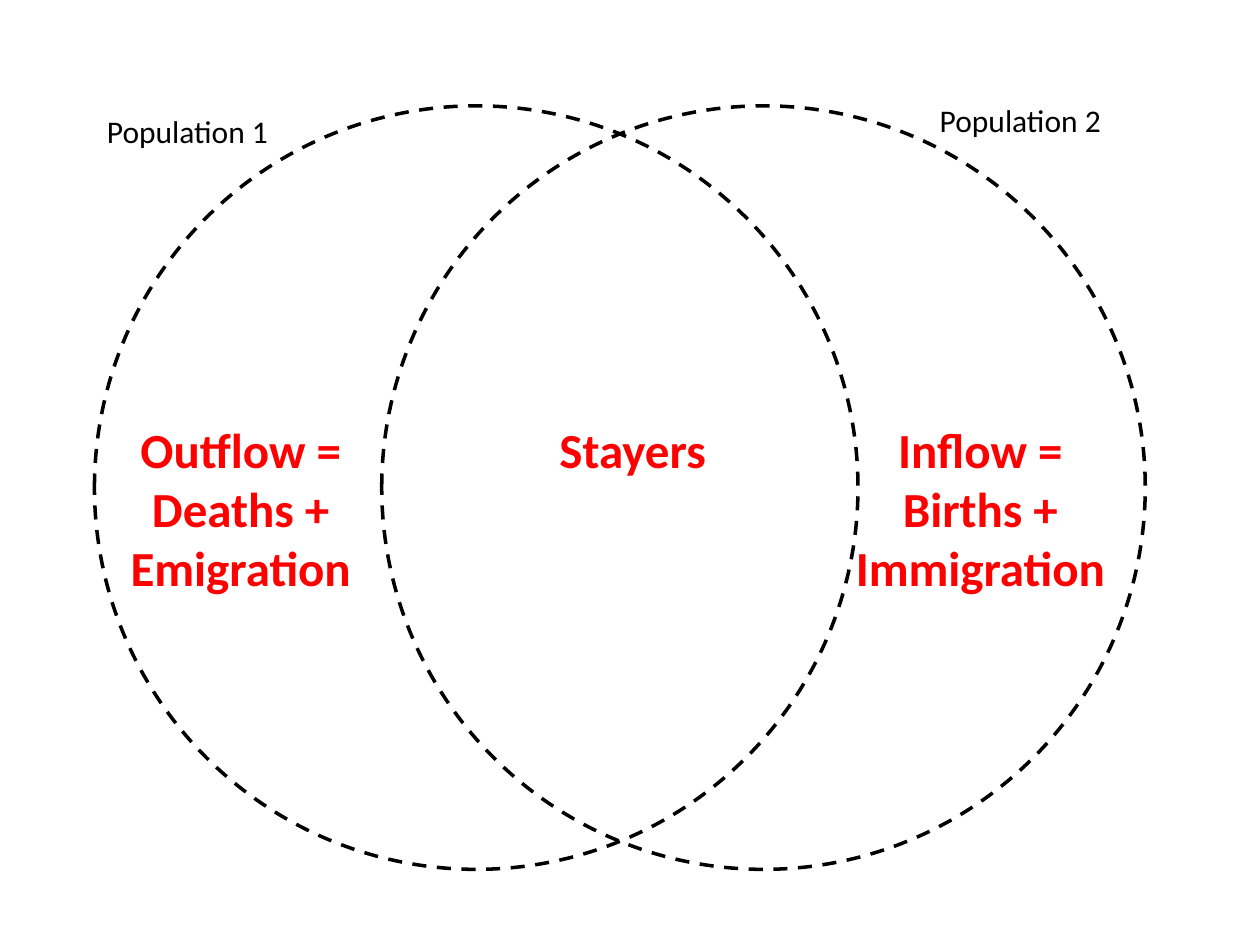
from pptx import Presentation
from pptx.dml.color import RGBColor
from pptx.enum.dml import MSO_LINE
from pptx.enum.shapes import MSO_SHAPE
from pptx.enum.text import MSO_AUTO_SIZE, PP_ALIGN
from pptx.util import Pt

OVAL = MSO_SHAPE.OVAL
DASH = MSO_LINE.DASH
LEFT, CENTER = PP_ALIGN.LEFT, PP_ALIGN.CENTER
GROW = MSO_AUTO_SIZE.SHAPE_TO_FIT_TEXT

COLORS = {"outline": "000000", "name": "000000", "flow": "FF0000"}

# Left edges of the two population circles
CIRCLE_LEFTS = [54, 218.16]
CIRCLE_TOP, DIAMETER = 60.5, 436.3

# Text lines, left, top
POPULATION_NAMES = [
    (["Population 1"], 54, 60.5),
    (["Population 2"], 529.9, 54),
]
FLOWS = [
    (["Stayers"], 272.2, 236.2),
    (["Outflow =", "Deaths +", "Emigration"], 48.2, 236.2),
    (["Inflow =", "Births + Immigration"], 470.9, 236.2),
]
NAME_STYLE = {"width": 164.2, "height": 29, "align": LEFT, "color": "name",
              "font": {"name": "Calibri", "size": Pt(18), "bold": False}}
FLOW_STYLE = {"width": 178.6, "height": 41, "align": CENTER, "color": "flow",
              "font": {"name": "Calibri", "size": Pt(28), "bold": True}}
EXTRA_LINE = 33.8


def rgb(role):
    return RGBColor.from_string(COLORS[role])


def add_circle(slide, left):
    circle = slide.shapes.add_shape(OVAL, Pt(left), Pt(CIRCLE_TOP),
                                    Pt(DIAMETER), Pt(DIAMETER))
    circle.shadow.inherit = False
    circle.fill.background()
    circle.line.color.rgb = rgb("outline")
    circle.line.width = Pt(2)
    circle.line.dash_style = DASH


def add_label(slide, lines, left, top, style):
    # Every flow label but the single-line one fills three lines once wrapped
    height = style["height"] + (2 * EXTRA_LINE if len(lines) > 1 else 0)
    label = slide.shapes.add_textbox(Pt(left), Pt(top),
                                     Pt(style["width"]), Pt(height))
    frame = label.text_frame
    frame.word_wrap = True
    frame.auto_size = GROW
    frame.text = "\n".join(lines)
    for paragraph in frame.paragraphs:
        paragraph.alignment = style["align"]
        font = paragraph.runs[0].font
        for attribute, value in style["font"].items():
            setattr(font, attribute, value)
        font.color.rgb = rgb(style["color"])


def main():
    presentation = Presentation()
    presentation.slide_width, presentation.slide_height = Pt(720), Pt(540)
    slide = presentation.slides.add_slide(presentation.slide_layouts[6])
    for left in CIRCLE_LEFTS:
        add_circle(slide, left)
    for labels, style in ((POPULATION_NAMES, NAME_STYLE), (FLOWS, FLOW_STYLE)):
        for lines, left, top in labels:
            add_label(slide, lines, left, top, style)
    presentation.save("out.pptx")


if __name__ == "__main__":
    main()
